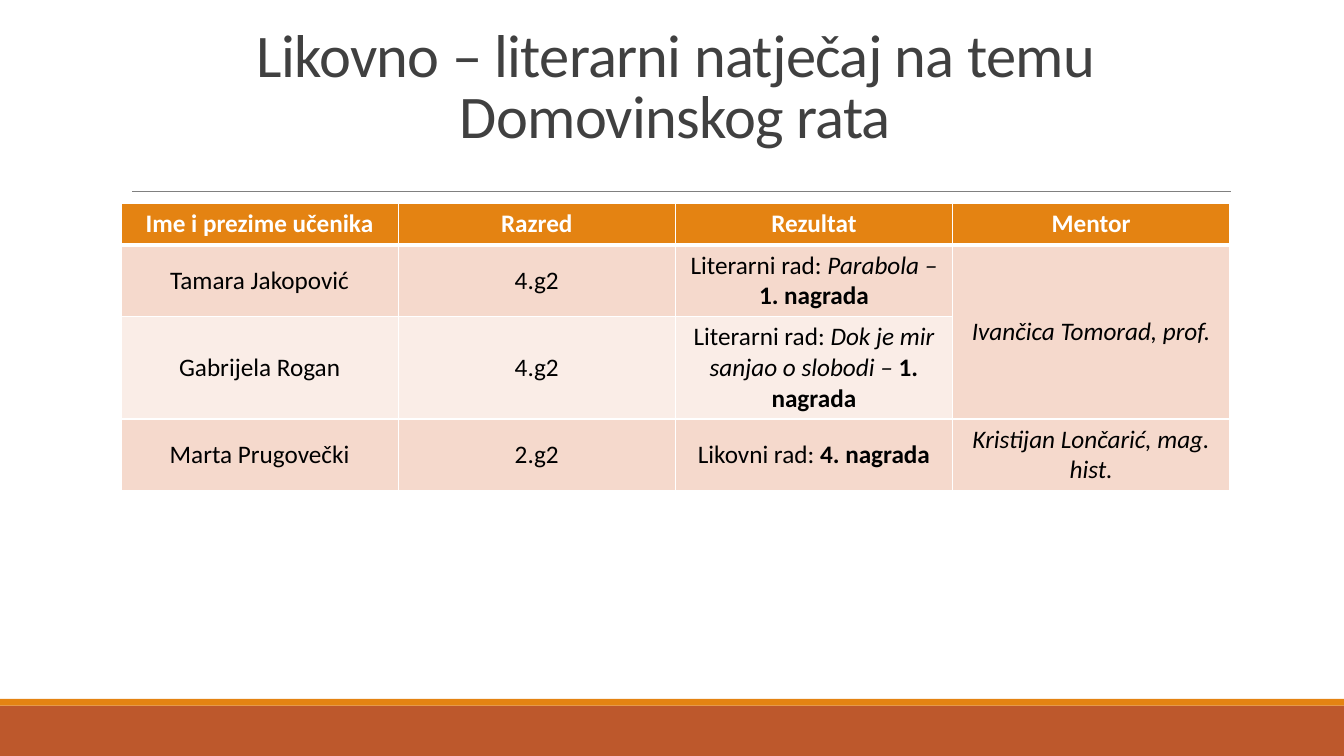
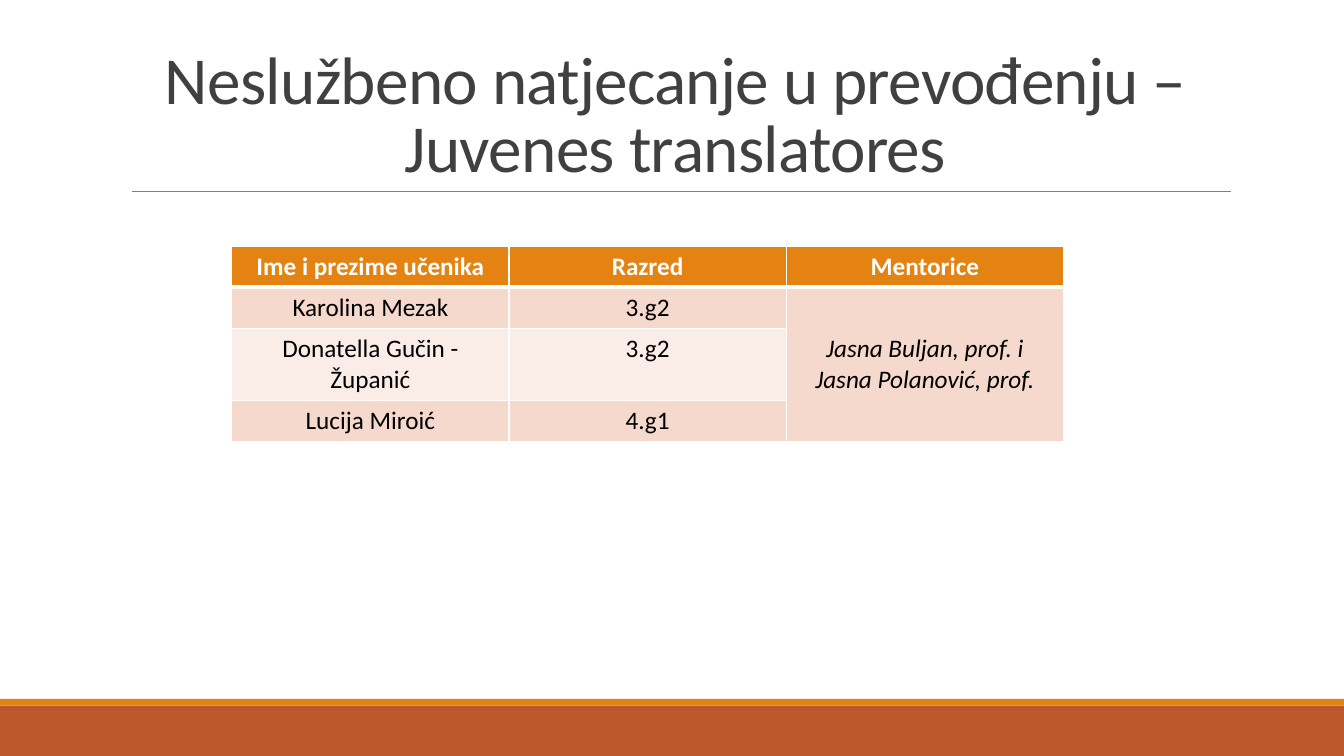
"""Builds two slides of school competition results."""
import pptx
import pptx.dml.color
import pptx.enum.shapes
import pptx.enum.text
import pptx.oxml
import pptx.oxml.ns
import pptx.util

COLUMNS, ROWS = 160, 90
STEP = pptx.util.Inches(1) / 12
FONT = "Calibri"
COLOURS = {
    "title": "404040", "text": "000000", "white": "FFFFFF", "rule": "808080",
    "accent": "E48312", "footer": "BD582C", "odd": "F5D9CC", "even": "FAEDE7",
}
MIDDLE = pptx.enum.text.MSO_ANCHOR.MIDDLE
TOP = pptx.enum.text.MSO_ANCHOR.TOP
BOTTOM = pptx.enum.text.MSO_ANCHOR.BOTTOM
COLUMN_WIDTH, ROW_HEIGHT = 33, 4.92


def colour(name):
    """Returns a named colour."""
    return pptx.dml.color.RGBColor.from_string(COLOURS[name])


def grid(*steps):
    """Turns grid steps into lengths."""
    return [pptx.util.Emu(round(step * STEP)) for step in steps]


def write_text(frame, spans, size=18, color="text", bold=False, italic=False,
               line_spacing=None, tracking=None):
    """Writes one centred paragraph; a span is plain text or (text, "b" or "i")."""
    para = frame.paragraphs[0]
    para.alignment = pptx.enum.text.PP_ALIGN.CENTER
    para.line_spacing = line_spacing
    for item in [spans] if isinstance(spans, str) else spans:
        text, style = (item, "") if isinstance(item, str) else item
        span = para.add_run()
        span.text = text
        span.font.name = FONT
        span.font.size = pptx.util.Pt(size)
        span.font.bold = bold or style == "b"
        span.font.italic = italic or style == "i"
        span.font.color.rgb = colour(color)
        if tracking is not None:
            span._r.get_or_add_rPr().set("spc", str(round(tracking * 100)))


def add_band(page, box, fill):
    """Adds a plain filled band."""
    band = page.shapes.add_shape(pptx.enum.shapes.MSO_SHAPE.RECTANGLE, *grid(*box))
    band.shadow.inherit = False
    band.fill.solid()
    band.fill.fore_color.rgb = colour(fill)
    band.line.fill.background()


def add_frame(page):
    """Adds the footer bands and the rule under the title."""
    add_band(page, (0, 84, COLUMNS, 6), "footer")
    add_band(page, (0, 83.2, COLUMNS, 0.8), "accent")
    rule = page.shapes.add_connector(
        pptx.enum.shapes.MSO_CONNECTOR.STRAIGHT, *grid(15.72, 22.8, 146.5, 22.8))
    rule.line.color.rgb = colour("rule")
    rule.line.width = pptx.util.Pt(0.5)
    rule._element.spPr.append(pptx.oxml.parse_xml(
        f"<a:effectLst {pptx.oxml.ns.nsdecls('a')}/>"))


def add_title(page, text, height, size):
    """Fills the title placeholder."""
    title = page.shapes.title
    title.left, title.top, title.width, title.height = grid(14.4, 3.72, 132, height)
    frame = title.text_frame
    frame.word_wrap = True
    frame.auto_size = pptx.enum.text.MSO_AUTO_SIZE.NONE
    frame.vertical_anchor = BOTTOM
    write_text(frame, text, size=size, color="title", line_spacing=0.85, tracking=-0.5)


def dress_cell(cell, fill, row):
    """Gives a cell white borders and a fill, with a thick line below the header."""
    properties = cell._tc.get_or_add_tcPr()
    widths = {"L": 1, "R": 1, "T": 3 if row == 1 else 1, "B": 3 if row == 0 else 1}
    for side, width in widths.items():
        properties.append(pptx.oxml.parse_xml(
            f'<a:ln{side} {pptx.oxml.ns.nsdecls("a")} w="{pptx.util.Pt(width)}">'
            f'<a:solidFill><a:srgbClr val="{COLOURS["white"]}"/></a:solidFill>'
            f'</a:ln{side}>'))
    cell.fill.solid()
    cell.fill.fore_color.rgb = colour(fill)


def add_results(page, left, top, rows, body_anchor):
    """Adds a result table; None joins a cell to the one above."""
    width, height = len(rows[0]), len(rows)
    table = page.shapes.add_table(
        height, width,
        *grid(left, top, width * COLUMN_WIDTH, height * ROW_HEIGHT)).table
    for row, values in enumerate(rows):
        for column, value in enumerate(values):
            cell = table.cell(row, column)
            header, mentor = row == 0, column == width - 1
            dress_cell(cell, "accent" if header else "odd" if row % 2 else "even", row)
            cell.vertical_anchor = MIDDLE if header or mentor else body_anchor
            if value is not None:
                write_text(cell.text_frame, value, bold=header,
                           color="white" if header else "text",
                           italic=mentor and not header)
    for column in range(width):
        start = 0
        for row in range(1, height + 1):
            if row == height or rows[row][column] is not None:
                if row - start > 1:
                    table.cell(start, column).merge(table.cell(row - 1, column))
                start = row


def add_page(deck, title, results):
    """Adds a slide with a title, the shared frame and a result table."""
    page = deck.slides.add_slide(deck.slide_layouts[5])
    add_frame(page)
    add_title(page, **title)
    add_results(page, **results)


PAGES = [
    {
        "title": {"text": "Likovno – literarni natječaj na temu Domovinskog rata",
                  "height": 14.88, "size": 43.2},
        "results": {"left": 14.4, "top": 24.24, "body_anchor": MIDDLE, "rows": [
            ["Ime i prezime učenika", "Razred", "Rezultat", "Mentor"],
            ["Tamara Jakopović", "4.g2",
             ["Literarni rad: ", ("Parabola – ", "i"), ("1. nagrada", "b")],
             "Ivančica Tomorad, prof."],
            ["Gabrijela Rogan", "4.g2",
             ["Literarni rad: ", ("Dok je mir sanjao o slobodi – ", "i"),
              ("1. nagrada", "b")], None],
            ["Marta Prugovečki", "2.g2", ["Likovni rad: ", ("4. nagrada", "b")],
             "Kristijan Lončarić, mag. hist."],
        ]},
    },
    {
        "title": {"text": "Neslužbeno natjecanje u prevođenju – Juvenes translatores",
                  "height": 19.08, "size": 48},
        "results": {"left": 27.6, "top": 29.28, "body_anchor": TOP, "rows": [
            ["Ime i prezime učenika", "Razred", "Mentorice"],
            ["Karolina Mezak", "3.g2", "Jasna Buljan, prof. i Jasna Polanović, prof."],
            ["Donatella Gučin - Županić", "3.g2", None],
            ["Lucija Miroić", "4.g1", None],
        ]},
    },
]


def main():
    """Builds and saves the deck."""
    deck = pptx.Presentation()
    deck.slide_width, deck.slide_height = grid(COLUMNS, ROWS)
    for content in PAGES:
        add_page(deck, **content)
    deck.save("out.pptx")


if __name__ == "__main__":
    main()
